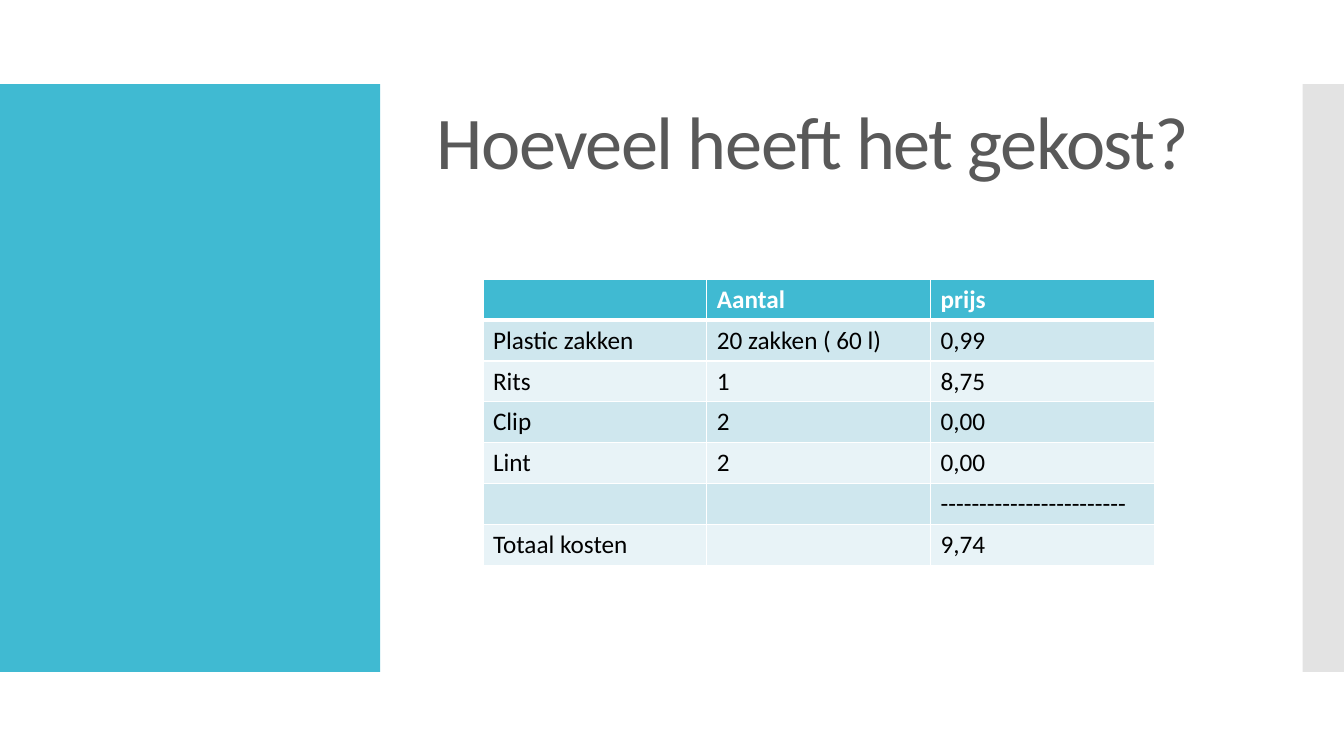
from lxml import etree
from pptx import Presentation
from pptx.dml.color import RGBColor
from pptx.enum.shapes import MSO_SHAPE
from pptx.enum.text import MSO_ANCHOR, MSO_AUTO_SIZE, PP_ALIGN
from pptx.oxml.ns import qn
from pptx.util import Inches, Pt

RECTANGLE = MSO_SHAPE.RECTANGLE
BOTTOM = MSO_ANCHOR.BOTTOM
NO_FIT = MSO_AUTO_SIZE.NONE
LEFT = PP_ALIGN.LEFT

HEADING = "Hoeveel heeft het gekost?"
COSTS = [
    ("", "Aantal", "prijs"),
    ("Plastic zakken", "20 zakken ( 60 l)", "0,99"),
    ("Rits", "1", "8,75"),
    ("Clip", "2", "0,00"),
    ("Lint", "2", "0,00"),
    ("", "", "------------------------"),
    ("Totaal kosten", "", "9,74"),
]

WIDTH, HEIGHT = 13.33, 7.5
ACCENT, WHITE = "40BAD2", "FFFFFF"
BANDS = ("E8F3F7", "CFE7EE")
PANEL_TOP, PANEL_HEIGHT = HEIGHT / 9, HEIGHT * 7 / 9
# left, width, colour, opacity in percent
PANELS = [(0, 3.77, ACCENT, 100), (WIDTH - 0.41, 0.41, "C8C8C8", 50)]
TITLE_BOX = (4.23, 0.89, 8, 1)
TABLE_LEFT, TABLE_TOP = 4.79, 2.77
COLUMN_WIDTH, ROW_HEIGHT = 2.22, 0.405
HEADING_FONT = {"name": "Calibri", "size": Pt(53.1), "bold": False}
CELL_FONT = {"name": "Calibri", "size": Pt(18)}


def rgb(colour):
    return RGBColor.from_string(colour)


def style_font(font, colour, values):
    for attribute, value in values.items():
        setattr(font, attribute, value)
    font.color.rgb = rgb(colour)


def add_panel(slide, left, width, colour, opacity):
    panel = slide.shapes.add_shape(
        RECTANGLE, *map(Inches, (left, PANEL_TOP, width, PANEL_HEIGHT)))
    panel.shadow.inherit = False
    panel.fill.solid()
    panel.fill.fore_color.rgb = rgb(colour)
    panel.line.fill.background()
    if opacity < 100:
        tint = panel.fill._xPr.find(".//" + qn("a:srgbClr"))
        etree.SubElement(tint, qn("a:alpha"), val=str(opacity * 1000))


def set_heading(title):
    title.left, title.top, title.width, title.height = map(Inches, TITLE_BOX)
    frame = title.text_frame
    frame.text = HEADING
    frame.vertical_anchor = BOTTOM
    frame.auto_size = NO_FIT
    frame.word_wrap = True
    paragraph = frame.paragraphs[0]
    paragraph.alignment = LEFT
    paragraph.line_spacing = 0.9
    run = paragraph.runs[0]
    style_font(run.font, "595959", HEADING_FONT)
    run.font._element.set("spc", "-100")


def add_borders(cell, widths):
    """Draw white cell borders, with widths in points by side."""
    properties = cell._tc.get_or_add_tcPr()
    for position, (side, points) in enumerate(widths.items()):
        line = etree.Element(qn("a:ln" + side), w=str(Pt(points)))
        fill = etree.SubElement(line, qn("a:solidFill"))
        etree.SubElement(fill, qn("a:srgbClr"), val=WHITE)
        properties.insert(position, line)


def add_cost_table(slide):
    columns, rows = len(COSTS[0]), len(COSTS)
    table = slide.shapes.add_table(
        rows, columns, Inches(TABLE_LEFT), Inches(TABLE_TOP),
        Inches(columns * COLUMN_WIDTH), Inches(rows * ROW_HEIGHT)).table
    for row, entries in enumerate(COSTS):
        header = row == 0
        for column, entry in enumerate(entries):
            cell = table.cell(row, column)
            cell.text = entry
            style_font(cell.text_frame.paragraphs[0].font,
                       WHITE if header else "000000",
                       {**CELL_FONT, "bold": header})
            cell.fill.solid()
            cell.fill.fore_color.rgb = rgb(ACCENT if header else BANDS[row % 2])
            add_borders(cell, {"L": 1, "R": 1, "T": 3 if row == 1 else 1,
                               "B": 3 if header else 1})


def main():
    deck = Presentation()
    deck.slide_width, deck.slide_height = Inches(WIDTH), Inches(HEIGHT)
    slide = deck.slides.add_slide(deck.slide_layouts.get_by_name("Title Only"))
    for panel in PANELS:
        add_panel(slide, *panel)
    set_heading(slide.shapes.title)
    add_cost_table(slide)
    deck.save("out.pptx")


if __name__ == "__main__":
    main()
